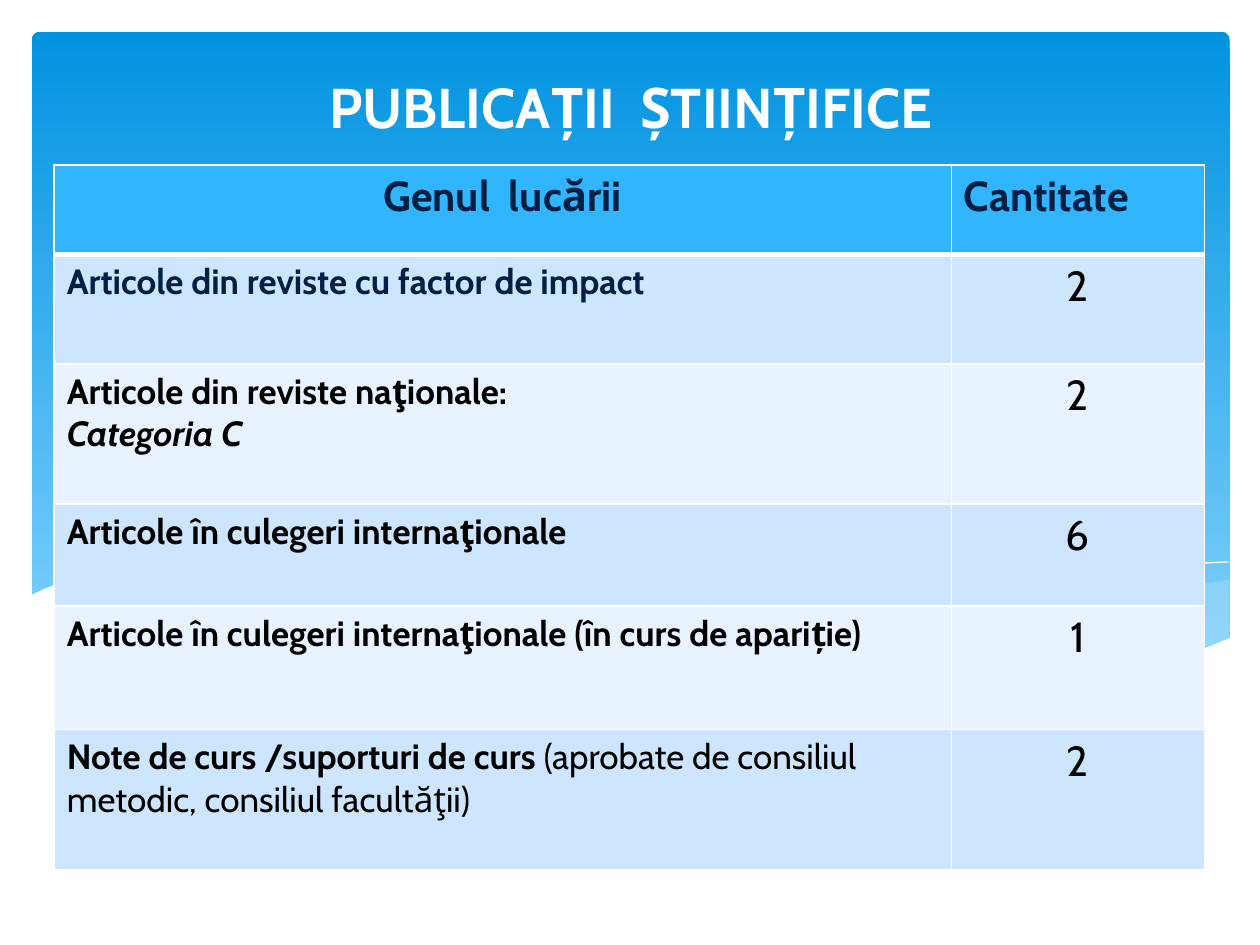
from lxml import etree
from pptx import Presentation
from pptx.dml.color import RGBColor
from pptx.enum.shapes import MSO_SHAPE
from pptx.enum.text import MSO_ANCHOR, PP_ALIGN
from pptx.oxml.ns import qn
from pptx.util import Inches, Pt

CENTER, LEFT = PP_ALIGN.CENTER, PP_ALIGN.LEFT
BOTTOM = MSO_ANCHOR.BOTTOM
ROUNDED = MSO_SHAPE.ROUNDED_RECTANGLE

COLORS = {
    "white": "FFFFFF",
    "black": "000000",
    "navy": "041F44",
    "sky_top": "0293E0",
    "sky_bottom": "83D3FE",
    "mist": "C6E7FC",
    "header": "31B6FD",
    "band_dark": "CEE5FE",
    "band_light": "E8F3FF",
}

RIGHT_SWELL = [
    (97.6, 46), (94.8, 46.4), (92.1, 47), (89.1, 47.6), (86.1, 48.3),
    (80.5, 49.7), (75.3, 50.8), (70.6, 51.8), (66.1, 52.5), (69.1, 53),
    (73.2, 53.4), (76.9, 53.7), (81.4, 53.8), (85.4, 53.6), (88.9, 53.2),
    (92.1, 52.6), (94.9, 51.7), (97.6, 50.7),
]
MIDDLE_SWELL = [
    (89.3, 53.3), (83.7, 52.5), (77.5, 51.4), (70.6, 50), (62.9, 48.2),
    (58.4, 47.1), (54.1, 46.3), (48.9, 45.4), (44.2, 44.9), (38, 44.6),
    (32.8, 44.7), (28.6, 45.2), (34.2, 45.9), (40.4, 47.1), (44.9, 48.2),
    (53, 50.1), (60.1, 51.5), (66.5, 52.6), (72.2, 53.4), (77.3, 53.8),
    (81.8, 53.9), (85.7, 53.7),
]
LONG_CREST = [
    (30.9, 45.6), (34.4, 45), (38.7, 44.8), (43.3, 44.7), (48.9, 45),
    (55.6, 45.7), (63.6, 46.8), (72.7, 48.6), (83.1, 51.1), (90.7, 53.2),
]
SHORT_CREST = [
    (61.3, 51.7), (67.2, 50.1), (74.8, 48.3), (80.6, 47), (86.6, 45.9),
    (91, 45.2), (95.1, 44.7), (97.5, 44.6),
]
WHITE_WAVE = [
    (97.7, 50.6), (95, 51.7), (92, 52.5), (88.7, 53.1), (85, 53.5),
    (80.9, 53.7), (76.1, 53.5), (70.8, 53), (64.8, 52.2), (57.9, 51),
    (50.3, 49.3), (41.8, 47.3), (36.5, 46.2), (31.6, 45.4), (27.1, 44.8),
    (23, 44.5), (19.3, 44.4), (14.6, 44.5), (10.6, 44.9), (7.6, 45.5),
    (5.2, 46.1), (3.6, 46.7), (2.3, 47.3), (2.3, 58.9), (97.7, 58.9),
]

HEADER = {"size": 24, "bold": True, "color": "navy"}
COUNT = {"size": 24, "bold": False, "color": "black"}
TOPIC = {"size": 20, "bold": True, "color": "black"}
REMARK = {**TOPIC, "bold": False}

ENTRIES = [
    ([[("Articole din reviste cu factor de impact", {**TOPIC, "color": "navy"})]], "2"),
    ([[("Articole din reviste naţionale:", TOPIC)],
      [("Categoria C", {**TOPIC, "italic": True})]], "2"),
    ([[("Articole în culegeri internaţionale", TOPIC)]], "6"),
    ([[("Articole în culegeri internaţionale (în curs de apariție)", TOPIC)]], "1"),
    ([[("Note de curs /suporturi de curs ", TOPIC),
       ("(aprobate de consiliul metodic, consiliul facultăţii)", REMARK)]], "2"),
]


def color(name):
    return RGBColor.from_string(COLORS[name])


def grid(*units):
    return [Inches(unit / 10) for unit in units]


class PageBuilder:
    font_name = "Cabin"

    def __init__(self, deck):
        self.page = deck.slides.add_slide(deck.slide_layouts[6])

    def fill_text(self, frame, paragraphs, align):
        for index, spans in enumerate(paragraphs):
            para = frame.paragraphs[0] if index == 0 else frame.add_paragraph()
            para.alignment = align
            for text, style in spans:
                span = para.add_run()
                span.text = text
                values = {**style, "name": self.font_name, "size": Pt(style["size"])}
                span.font.color.rgb = color(values.pop("color"))
                for key, value in values.items():
                    setattr(span.font, key, value)

    def gradient_panel(self, area, colors, rounding):
        panel = self.page.shapes.add_shape(ROUNDED, *grid(*area))
        panel.adjustments[0] = rounding
        panel.shadow.inherit = False
        panel.line.fill.background()
        panel.fill.gradient()
        panel.fill.gradient_angle = 270
        for stop, name, position in zip(panel.fill.gradient_stops, colors, (0, 1)):
            stop.color.rgb = color(name)
            stop.position = position

    def outline(self, points, closed):
        corners = [grid(*point) for point in points]
        builder = self.page.shapes.build_freeform(*corners[0])
        builder.add_line_segments(corners[1:], close=closed)
        shape = builder.convert_to_shape()
        shape.shadow.inherit = False
        return shape

    def wave(self, points, fill, opacity=100):
        shape = self.outline(points, True)
        shape.line.fill.background()
        shape.fill.solid()
        shape.fill.fore_color.rgb = color(fill)
        if opacity < 100:
            tint = shape.element.spPr.find(qn("a:solidFill"))[0]
            etree.SubElement(tint, qn("a:alpha")).set("val", str(opacity * 1000))

    def crest(self, points):
        shape = self.outline(points, False)
        shape.fill.background()
        shape.line.color.rgb = color("white")
        shape.line.width = Pt(0)

    def title(self, area, text):
        box = self.page.shapes.add_textbox(*grid(*area))
        frame = box.text_frame
        frame.word_wrap = True
        frame.vertical_anchor = BOTTOM
        style = {"size": 32, "bold": True, "color": "white"}
        self.fill_text(frame, [[(text, style)]], CENTER)

    def cell(self, cell, paragraphs, align, fill, top=1, bottom=1):
        properties = cell._tc.get_or_add_tcPr()
        for side, width in (("L", 1), ("R", 1), ("T", top), ("B", bottom)):
            edge = etree.SubElement(properties, qn(f"a:ln{side}"), w=str(Pt(width)))
            paint = etree.SubElement(edge, qn("a:solidFill"))
            etree.SubElement(paint, qn("a:srgbClr"), val=COLORS["white"])
        cell.fill.solid()
        cell.fill.fore_color.rgb = color(fill)
        self.fill_text(cell.text_frame, paragraphs, align)

    def table(self, corner, columns, rows, headings, entries):
        area = grid(*corner, sum(columns), sum(rows))
        table = self.page.shapes.add_table(len(rows), len(columns), *area).table
        for column, width in zip(table.columns, grid(*columns)):
            column.width = width
        for row, height in zip(table.rows, grid(*rows)):
            row.height = height
        for index, (text, align) in enumerate(headings):
            self.cell(table.cell(0, index), [[(text, HEADER)]], align, "header", bottom=3)
        for index, (topic, count) in enumerate(entries, 1):
            fill = "band_dark" if index % 2 else "band_light"
            top = 3 if index == 1 else 1
            self.cell(table.cell(index, 0), topic, LEFT, fill, top)
            self.cell(table.cell(index, 1), [[(count, COUNT)]], CENTER, fill, top)


def main():
    deck = Presentation()
    deck.slide_width, deck.slide_height = Inches(10), Inches(7.5)
    page = PageBuilder(deck)
    page.gradient_panel((2.5, 2.5, 95.1, 51.8), ("sky_top", "sky_bottom"), 0.013)
    page.wave(RIGHT_SWELL, "mist", 29)
    page.wave(MIDDLE_SWELL, "mist", 40)
    page.crest(LONG_CREST)
    page.crest(SHORT_CREST)
    page.wave(WHITE_WAVE, "white")
    page.title((15, 2.9, 70.2, 8.7), "PUBLICAȚII  ȘTIINȚIFICE")
    page.table((4.3, 13.1), (71.2, 20.1), (7.1, 8.7, 11.1, 8.1, 9.8, 11.1),
               (("Genul  lucării", CENTER), ("Cantitate", LEFT)), ENTRIES)
    deck.save("out.pptx")


if __name__ == "__main__":
    main()
